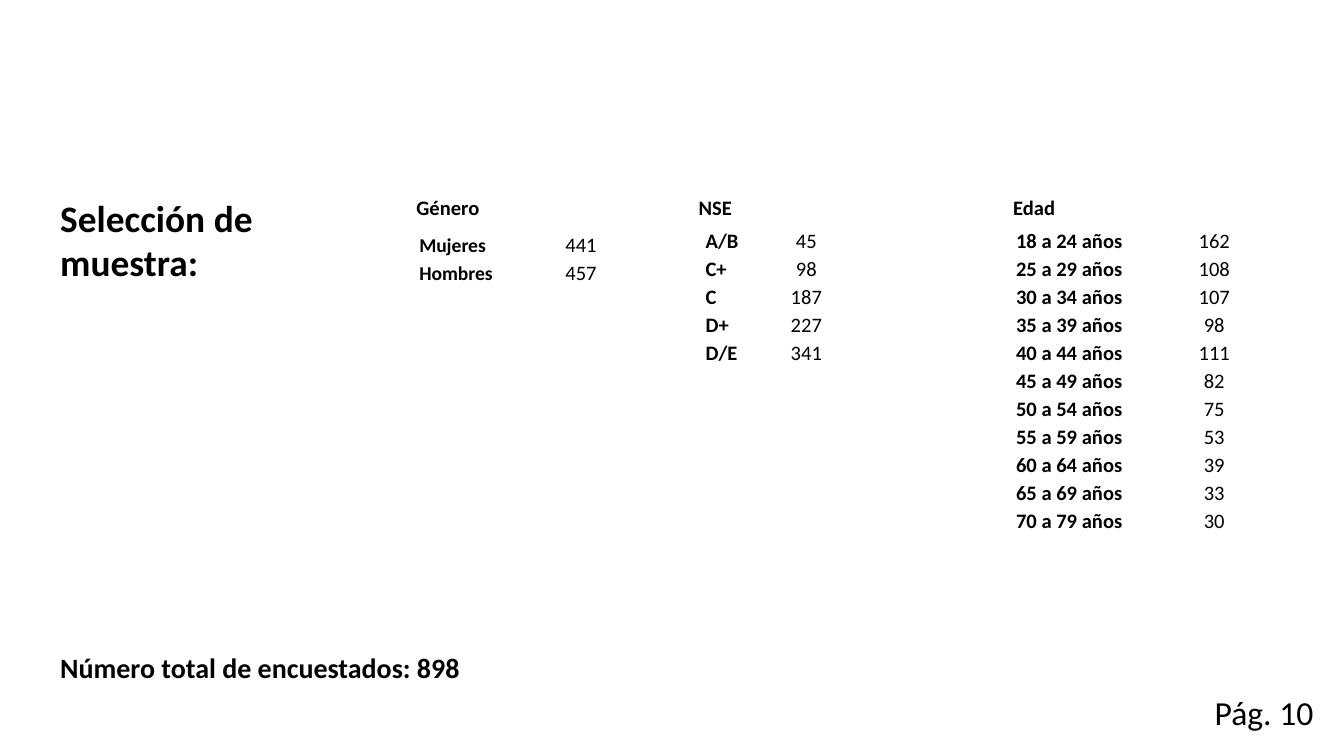
from pptx import Presentation
from pptx.dml.color import RGBColor
from pptx.enum.text import MSO_ANCHOR, PP_ALIGN
from pptx.util import Inches, Pt

LEFT, CENTER, RIGHT = PP_ALIGN.LEFT, PP_ALIGN.CENTER, PP_ALIGN.RIGHT
BOTTOM = MSO_ANCHOR.BOTTOM


def color(code):
    return RGBColor.from_string(code)


class Page:
    font = "Calibri"
    ink = "000000"
    row = Pt(15)

    def __init__(self, deck):
        self.slide = deck.slides.add_slide(deck.slide_layouts[6])

    def style(self, para, size, bold, align=LEFT):
        para.alignment = align
        for run in para.runs:
            run.font.name = self.font
            run.font.size = Pt(size)
            run.font.bold = bold
            run.font.color.rgb = color(self.ink)

    def text(self, words, box, size, bold=True, wrap=False):
        frame = self.slide.shapes.add_textbox(*map(Inches, box)).text_frame
        frame.word_wrap = wrap
        frame.text = words
        for para in frame.paragraphs:
            self.style(para, size, bold)

    def cell(self, cell, words, size, bold, align):
        cell.fill.background()
        cell.vertical_anchor = BOTTOM
        cell.margin_left = cell.margin_right = cell.margin_top = Inches(0.01)
        cell.margin_bottom = 0
        cell.text = words
        self.style(cell.text_frame.paragraphs[0], size, bold, align)

    def table(self, data, left, top, widths, size=11, align=CENTER):
        grid = self.slide.shapes.add_table(
            len(data), 2, Inches(left), Inches(top),
            Inches(sum(widths)), self.row * len(data)).table
        grid.first_row = grid.horz_banding = False
        for col, width in zip(grid.columns, widths):
            col.width = Inches(width)
        for i, (label, count) in enumerate(data):
            grid.rows[i].height = self.row
            self.cell(grid.cell(i, 0), label, size, True, LEFT)
            self.cell(grid.cell(i, 1), str(count), 11, False, align)


def main():
    # Widescreen page, 16:9
    deck = Presentation()
    deck.slide_width, deck.slide_height = Inches(10), Inches(10 * 9 / 16)
    page = Page(deck)

    # Income level
    page.table([("A/B", 45), ("C+", 98), ("C", 187), ("D+", 227),
                ("D/E", 341)], 5.24, 1.68, (0.34, 0.84))

    # Title
    page.text("Selección de\nmuestra:", (0.35, 1.4, 9.27, 1.41), 20, wrap=True)

    # Gender
    page.table([("Mujeres", 441), ("Hombres", 457)],
               3.11, 1.71, (0.96, 0.38), 10.5, RIGHT)

    # Age
    counts = (162, 108, 107, 98, 111, 82, 75, 53, 39, 33, 30)
    starts = (18, *range(25, 75, 5))
    ends = (*range(24, 70, 5), 79)
    ages = [(f"{a} a {b} años", n) for a, b, n in zip(starts, ends, counts)]
    page.table(ages, 7.55, 1.68, (1.11, 0.75))

    # Group headings
    for name, left, width in (("Género", 3, 0.76), ("NSE", 5.1, 0.54),
                              ("Edad", 7.44, 0.6)):
        page.text(name, (left, 1.4, width, 0.29), 11)

    # Page number and total
    page.text("Pág. 10", (8.94, 5.1, 0.94, 0.4), 18, bold=False)
    page.text("Número total de encuestados: 898", (0.35, 4.79, 3.86, 0.8), 15,
              wrap=True)

    deck.save("out.pptx")


if __name__ == "__main__":
    main()
